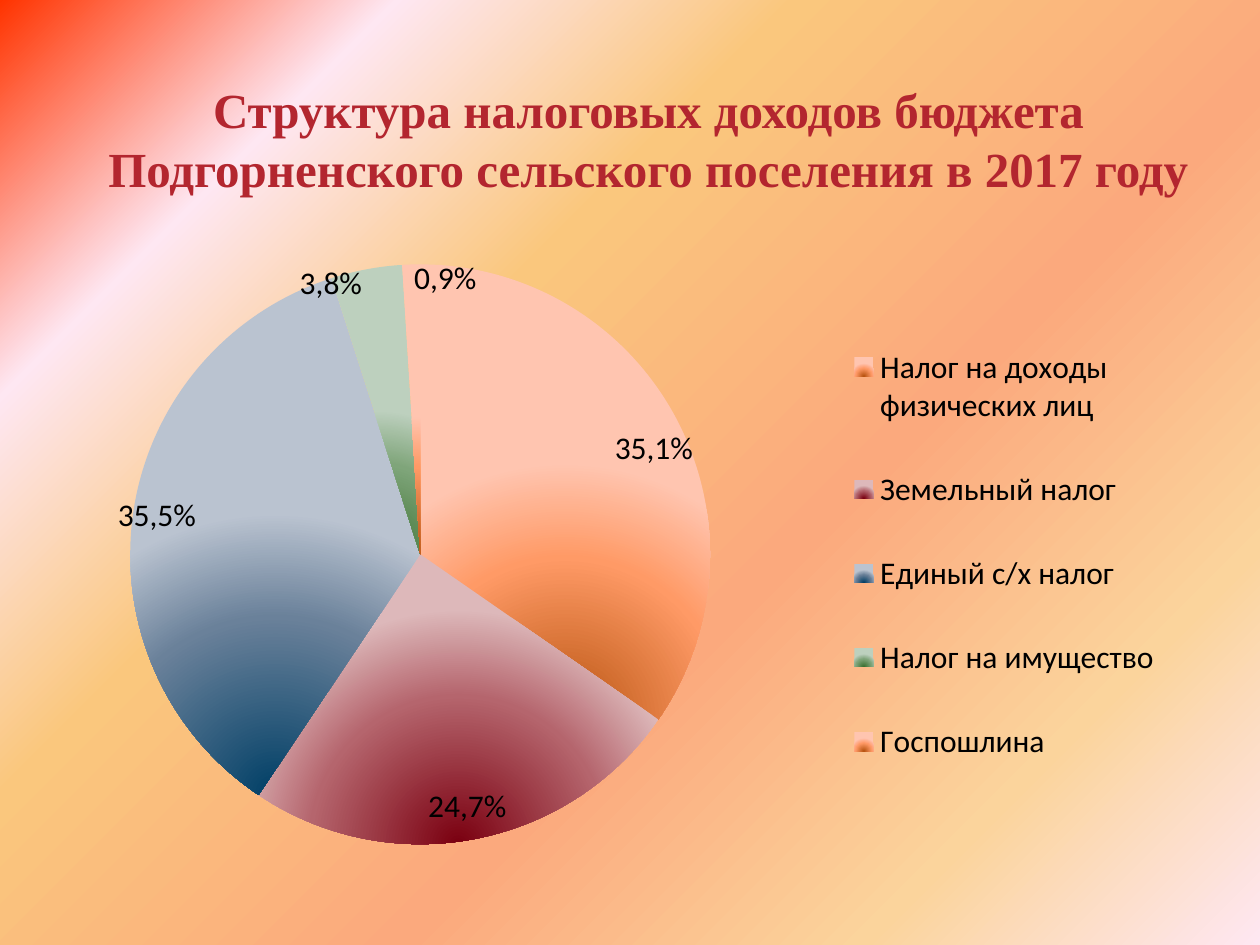
from lxml import etree
from pptx import Presentation
from pptx.chart.data import CategoryChartData
from pptx.dml.color import RGBColor
from pptx.enum.chart import XL_CHART_TYPE, XL_LABEL_POSITION, XL_LEGEND_POSITION
from pptx.enum.text import MSO_ANCHOR, PP_ALIGN
from pptx.oxml import parse_xml
from pptx.oxml.ns import nsdecls, qn
from pptx.util import Cm, Pt

PIE = XL_CHART_TYPE.PIE
INSIDE_END = XL_LABEL_POSITION.INSIDE_END
LEGEND_RIGHT = XL_LEGEND_POSITION.RIGHT
TOP = MSO_ANCHOR.TOP
CENTER = PP_ALIGN.CENTER

TITLE = "Структура налоговых доходов бюджета Подгорненского сельского поселения в 2017 году"
BACKGROUND = [(0, "FF3300"), (18, "FEE7F2"), (36, "FAC77D"),
              (61, "FBA97D"), (82, "FBD49C"), (100, "FEE7F2")]
LINEAR = '<a:lin ang="2700000" scaled="0"/>'
RADIAL = '<a:path path="circle"><a:fillToRect l="50000" t="100000" r="50000"/></a:path>'
ORANGE = ("B85410", "FF9A66", "FFC5B0")
# category, value, label, colours from the core outwards, label shift across and down
TAXES = [
    ("Налог на доходы физических лиц", 35, "35,1%", ORANGE, (0.02, 0.01)),
    ("Земельный налог", 25, "24,7%", ("7A0010", "B5656D", "DDB8BA"), (0.03, -0.01)),
    ("Единый с/х налог", 36, "35,5%", ("003F66", "6A819A", "BAC3D0"), (-0.02, -0.03)),
    ("Налог на имущество", 4, "3,8%", ("3A7030", "7FA57A", "BDD0BE"), (-0.06, -0.02)),
    ("Госпошлина", 1, "0,9%", ORANGE, (0.03, -0.02)),
]


def color(value):
    return RGBColor.from_string(value)


def format_font(font, size=18, name="Calibri", fill="000000", bold=False):
    font.size, font.name, font.bold = Pt(size), name, bold
    font.color.rgb = color(fill)


def set_gradient(parent, stops, direction):
    """Put a gradient in place of the solid fill of parent."""
    marks = "".join(f'<a:gs pos="{place * 1000}"><a:srgbClr val="{value}"/></a:gs>'
                    for place, value in stops)
    gradient = parse_xml(f'<a:gradFill {nsdecls("a")} rotWithShape="1">'
                         f'<a:gsLst>{marks}</a:gsLst>{direction}</a:gradFill>')
    parent.replace(parent.find(qn("a:solidFill")), gradient)


def set_layout(parent, index, **values):
    """Place a chart part by fractions of the chart area."""
    for old in parent.findall(qn("c:layout")):
        parent.remove(old)
    layout = etree.Element(qn("c:layout"))
    manual = etree.SubElement(layout, qn("c:manualLayout"))
    for tag, value in values.items():
        etree.SubElement(manual, qn(f"c:{tag}")).set("val", str(value))
    parent.insert(index, layout)


def add_background(slide):
    fill = slide.background.fill
    fill.solid()
    fill.fore_color.rgb = color(BACKGROUND[0][1])
    set_gradient(slide.element.find(f".//{qn('p:bgPr')}"), BACKGROUND, LINEAR)


def add_text(slide, text, left, top, width, height, **font_format):
    box = slide.shapes.add_textbox(Cm(left), Cm(top), Cm(width), Cm(height))
    frame = box.text_frame
    frame.word_wrap = True
    frame.vertical_anchor = TOP
    frame.margin_top = Cm(0.19)
    para = frame.paragraphs[0]
    para.alignment = CENTER
    para.line_spacing = Pt(34)
    span = para.add_run()
    span.text = text
    format_font(span.font, **font_format)


def format_slice(point, text):
    point.format.fill.solid()
    point.format.fill.fore_color.rgb = color("FFFFFF")
    point.format.line.fill.background()
    label = point.data_label
    span = label.text_frame.paragraphs[0].add_run()
    span.text = text
    format_font(span.font)
    label.position = INSIDE_END


def add_tax_pie(slide, left, top, width, height):
    data = CategoryChartData()
    data.categories = [tax[0] for tax in TAXES]
    data.add_series("Series 1", [tax[1] for tax in TAXES])
    chart = slide.shapes.add_chart(PIE, Cm(left), Cm(top), Cm(width), Cm(height), data).chart
    chart.has_title = False
    format_font(chart.font)
    chart.has_legend = True
    chart.legend.position = LEGEND_RIGHT
    chart.legend.include_in_layout = False
    format_font(chart.legend.font)

    plot = chart.plots[0]
    plot.vary_by_categories = True
    plot.has_data_labels = True
    plot.data_labels.show_percentage = True
    for index, tax in enumerate(TAXES):
        format_slice(plot.series[0].points[index], tax[2])

    root = chart.element
    slices = root.findall(f".//{qn('c:dPt')}/{qn('c:spPr')}")
    labels = root.findall(f".//{qn('c:dLbl')}")
    for (*_, colors, (across, down)), area, label in zip(TAXES, slices, labels):
        set_gradient(area, zip((0, 60, 95), colors), RADIAL)
        set_layout(label, 1, x=across, y=down)
    set_layout(root.find(f".//{qn('c:plotArea')}"), 0, layoutTarget="inner",
               xMode="edge", yMode="edge", x=0.04, y=0.07, w=0.55, h=0.93)
    set_layout(root.find(f".//{qn('c:legend')}"), 1,
               xMode="edge", yMode="edge", x=0.68, y=0.13, w=0.3, h=0.81)


def main():
    deck = Presentation()
    deck.slide_width, deck.slide_height = Cm(25.4), Cm(19.05)
    slide = deck.slides.add_slide(deck.slide_layouts[6])
    add_background(slide)
    add_text(slide, TITLE, 1.78, 1.4, 22.58, 6.05,
             size=28, name="Times New Roman", fill="B3262F", bold=True)
    add_tax_pie(slide, 1.27, 4.45, 22.86, 12.57)
    deck.save("out.pptx")


if __name__ == "__main__":
    main()
